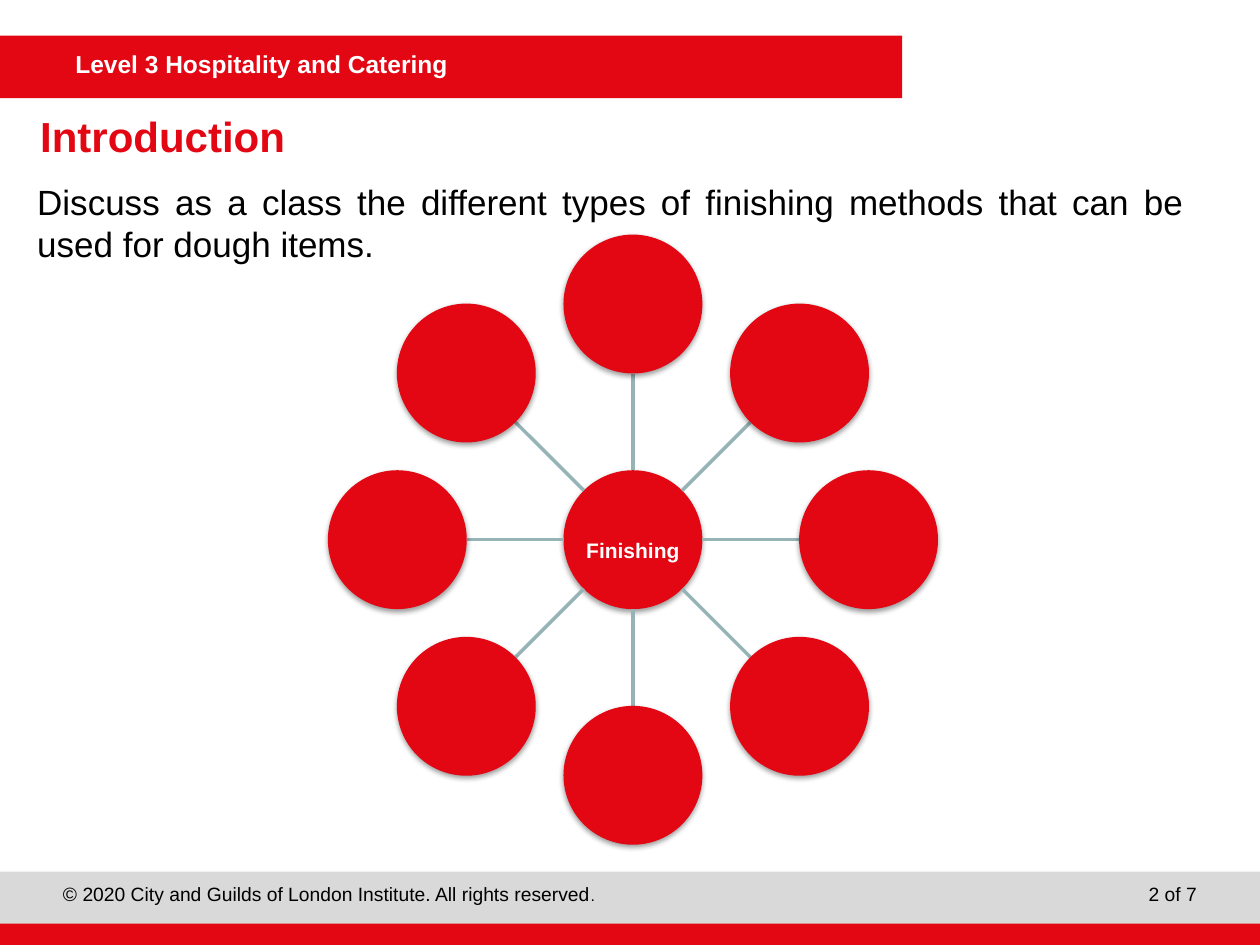
from math import cos, radians, sin

from lxml import etree
from pptx import Presentation
from pptx.dml.color import RGBColor
from pptx.enum.shapes import MSO_CONNECTOR, MSO_SHAPE
from pptx.enum.text import MSO_ANCHOR as Anchor, PP_ALIGN as Align
from pptx.oxml.ns import nsdecls, qn
from pptx.util import Cm, Pt

HEADER = "Level 3 Hospitality and Catering"
TITLE = "Introduction"
TASK = ("Discuss as a class the different types of finishing methods "
        "that can be used for dough items.")
HUB = "Finishing"
COPYRIGHT = "© 2020 City and Guilds of London Institute. All rights reserved"
PAGE = "2 of 7"

THEME = {
    "font": "Arial",
    "red": "E30613", "grey": "D9D9D9", "spoke": "96B3B6",
    "white": "FFFFFF", "black": "000000",
    "title": 24, "body": 20, "header": 14, "hub": 12, "footer": 11, "stop": 9,
}

# Bars: left, top, width, height in cm, and colour
BARS = [
    (0, 0.72, 18.19, 1.26, "red"),
    (0, 17.57, 25.4, 1.06, "grey"),
    (0, 18.62, 25.4, 0.43, "red"),
]

# Wheel, in cm
CENTRE_X, CENTRE_Y = 12.76, 10.88
DIAMETER = 2.8
ORBIT = 4.75
SATELLITES = 8

TEXT_INSETS = (0.25, 0.13, 0.25, 0.13)
NO_INSETS = (0, 0, 0, 0)


def colour(name):
    return RGBColor.from_string(THEME[name])


def write(shape, text, size="body", fill="black", bold=False, align=Align.LEFT,
          anchor=Anchor.TOP, insets=TEXT_INSETS):
    """Put one formatted paragraph in a shape and return the paragraph."""
    frame = shape.text_frame
    frame.word_wrap = True
    frame.vertical_anchor = anchor
    frame.margin_left, frame.margin_top, frame.margin_right, frame.margin_bottom = map(Cm, insets)
    paragraph = frame.paragraphs[0]
    paragraph.alignment = align
    run = paragraph.add_run()
    run.text = text
    style(run.font, size, fill, bold)
    return paragraph


def style(font, size, fill, bold=False):
    font.name = THEME["font"]
    font.size = Pt(THEME[size])
    font.bold = bold
    font.color.rgb = colour(fill)


def add_text(slide, box, text, **options):
    return write(slide.shapes.add_textbox(*map(Cm, box)), text, **options)


def add_filled(slide, kind, box, fill):
    shape = slide.shapes.add_shape(kind, *map(Cm, box))
    shape.shadow.inherit = False
    shape.fill.solid()
    shape.fill.fore_color.rgb = colour(fill)
    shape.line.fill.background()
    return shape


def add_circle(slide, x, y):
    """Add a red circle with a soft shadow, centred on x, y."""
    radius = DIAMETER / 2
    circle = add_filled(slide, MSO_SHAPE.OVAL, (x - radius, y - radius, DIAMETER, DIAMETER), "red")
    effects = circle.element.spPr.find(qn("a:effectLst"))
    effects.append(etree.fromstring(
        f'<a:outerShdw {nsdecls("a")} blurRad="40000" dist="20000" dir="5400000" rotWithShape="0">'
        '<a:srgbClr val="000000"><a:alpha val="38000"/></a:srgbClr></a:outerShdw>'))
    return circle


def add_spoke(slide, start, end):
    spoke = slide.shapes.add_connector(MSO_CONNECTOR.STRAIGHT, *map(Cm, start + end))
    spoke.line.color.rgb = colour("spoke")
    spoke.line.width = Pt(2)
    etree.SubElement(spoke.element.spPr, qn("a:effectLst"))


def on_wheel(distance, angle):
    return (CENTRE_X + distance * cos(angle), CENTRE_Y + distance * sin(angle))


def add_wheel(slide):
    hub = add_circle(slide, CENTRE_X, CENTRE_Y)
    write(hub, HUB, size="hub", fill="white", bold=True, align=Align.CENTER,
          anchor=Anchor.MIDDLE, insets=(0, 0.43, 0, 0))
    for index in range(SATELLITES):
        angle = radians(index * 360 / SATELLITES - 90)
        add_spoke(slide, on_wheel(DIAMETER / 2, angle), on_wheel(ORBIT - DIAMETER / 2, angle))
        add_circle(slide, *on_wheel(ORBIT, angle))


def main():
    presentation = Presentation()
    presentation.slide_width, presentation.slide_height = Cm(25.4), Cm(19.05)
    slide = presentation.slides.add_slide(presentation.slide_layouts[5])

    for *box, fill in BARS:
        add_filled(slide, MSO_SHAPE.RECTANGLE, box, fill)
    add_text(slide, (1.27, 0.86, 16.92, 0.86), HEADER, size="header", fill="white", bold=True)

    notice = add_text(slide, (1.27, 17.78, 17.98, 0.64), COPYRIGHT, size="footer", insets=NO_INSETS)
    stop = notice.add_run()
    stop.text = "."
    style(stop.font, "stop", "black")
    add_text(slide, (20.12, 17.78, 4.01, 0.64), PAGE, size="footer", align=Align.RIGHT,
             insets=NO_INSETS)

    title = slide.shapes.title
    title.left, title.top, title.width, title.height = map(Cm, (0.56, 2.21, 22.83, 1.07))
    write(title, TITLE, size="title", fill="red", bold=True, anchor=Anchor.MIDDLE)

    add_wheel(slide)
    add_text(slide, (0.5, 3.5, 23.62, 1.8), TASK, align=Align.JUSTIFY)
    presentation.save("out.pptx")


if __name__ == "__main__":
    main()
